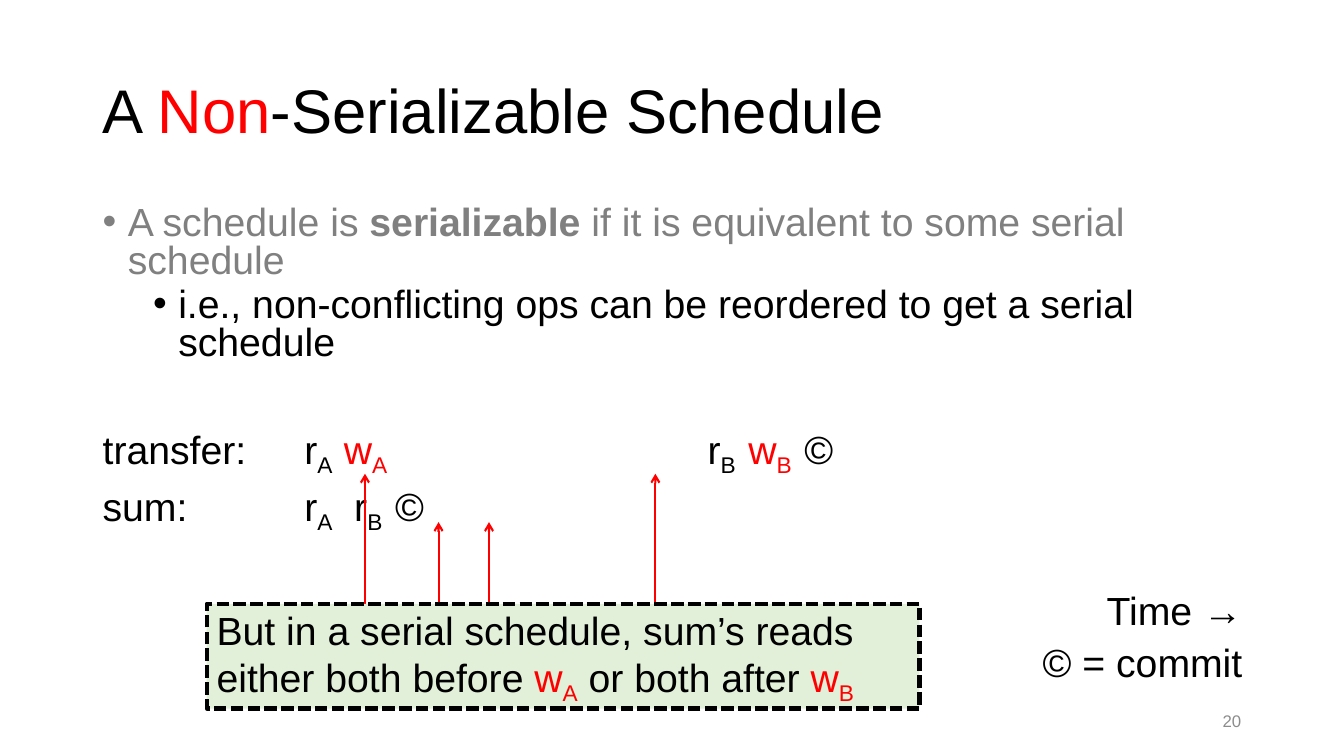
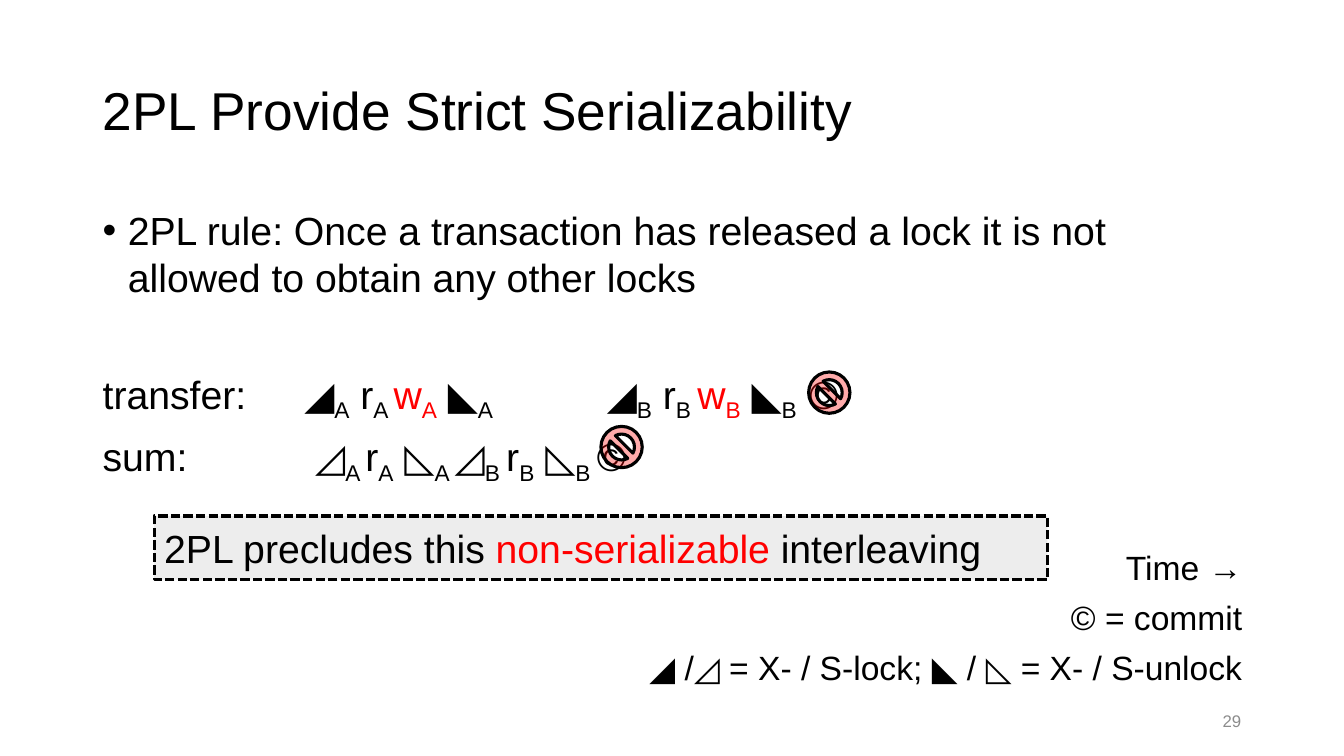
from lxml import etree
from pptx import Presentation
from pptx.dml.color import RGBColor
from pptx.enum import dml, shapes, text
from pptx.oxml import ns
from pptx.util import Inches, Pt

BLACK = RGBColor(0x00, 0x00, 0x00)
RED = RGBColor(0xFF, 0x00, 0x00)
GRAY = RGBColor(0x80, 0x80, 0x80)
PALE = RGBColor(0x8C, 0x8C, 0x8C)
GREEN = RGBColor(0xE2, 0xF0, 0xD9)
SILVER = RGBColor(0xED, 0xED, 0xED)
FONT = "Arial"
LEFT, WIDE = 0.92, 11.5
RIGHT = text.PP_ALIGN.RIGHT
MID = text.MSO_ANCHOR.MIDDLE


def add_sub(node, tag, **attrs):
    return etree.SubElement(node, ns.qn(tag), attrs)


def add_runs(para, line):
    """Add runs: *red*, ^bold^ and _subscript_ marks switch a style on and off."""
    for i, hue in enumerate(line.split("*")):
        for j, face in enumerate(hue.split("^")):
            for k, bit in enumerate(face.split("_")):
                if not bit:
                    continue
                run = para.add_run()
                run.text = bit
                if i % 2:
                    run.font.color.rgb = RED
                if j % 2:
                    run.font.bold = True
                if k % 2:
                    run.font._element.set("baseline", "-25000")


def set_para(para, line, size=28, color=BLACK, align=text.PP_ALIGN.LEFT,
             space=None, before=0):
    para.alignment = align
    para.space_before = Pt(before)
    if space:
        para.line_spacing = space
    para.font.name = FONT
    para.font.size = Pt(size)
    para.font.color.rgb = color
    add_runs(para, line)


def set_bullet(para, level):
    para.level = level
    props = para._p.get_or_add_pPr()
    props.set("marL", str(Inches(0.25 + 0.5 * level)))
    props.set("indent", str(Inches(-0.25)))
    add_sub(props, "a:buFont", typeface=FONT)
    add_sub(props, "a:buChar", char="•")


def add_slide(deck, title, size, page):
    slide = deck.slides.add_slide(deck.slide_layouts[5])
    head = slide.shapes.title
    head.left, head.top = Inches(LEFT), Inches(0.4)
    head.width, head.height = Inches(WIDE), Inches(1.45)
    head.text_frame.vertical_anchor = MID
    set_para(head.text_frame.paragraphs[0], title, size, space=0.9)
    frame = add_text(slide, 9.41, 6.95, 3, 0.4)
    frame.vertical_anchor = MID
    set_para(frame.paragraphs[0], page, 12, PALE, RIGHT)
    return slide


def add_text(slide, x, y, w, h):
    box = slide.shapes.add_textbox(Inches(x), Inches(y), Inches(w), Inches(h))
    box.text_frame.word_wrap = True
    return box.text_frame


def add_body(slide, rows):
    """Each row is a line of text, a bullet level or None, and its format."""
    frame = add_text(slide, LEFT, 2, WIDE, 4.76)
    for i, (line, level, form) in enumerate(rows):
        para = frame.add_paragraph() if i else frame.paragraphs[0]
        para._p.get_or_add_pPr().set("defTabSz", str(Inches(1)))
        if level is not None:
            set_bullet(para, level)
        set_para(para, line, **form)


def add_shape(slide, kind, x, y, w, h, fill, width):
    shape = slide.shapes.add_shape(kind, Inches(x), Inches(y), Inches(w), Inches(h))
    shape.shadow.inherit = False
    shape.fill.solid()
    shape.fill.fore_color.rgb = fill
    shape.line.color.rgb = BLACK
    shape.line.width = Pt(width)
    return shape


def add_note(slide, line, x, y, w, h, fill, width):
    box = add_shape(slide, shapes.MSO_SHAPE.RECTANGLE, x, y, w, h, fill, width)
    box.line.dash_style = dml.MSO_LINE.SQUARE_DOT
    box.text_frame.word_wrap = True
    box.text_frame.vertical_anchor = MID
    set_para(box.text_frame.paragraphs[0], line)


def add_arrow(slide, x, top, base):
    line = slide.shapes.add_connector(
        shapes.MSO_CONNECTOR.STRAIGHT, Inches(x), Inches(base), Inches(x), Inches(top))
    line.line.color.rgb = RED
    line.line.width = Pt(1.5)
    add_sub(line.line._get_or_add_ln(), "a:tailEnd", type="arrow")
    add_sub(line._element.spPr, "a:effectLst")


def add_ban(slide, x, y):
    ban = add_shape(slide, shapes.MSO_SHAPE.NO_SYMBOL, x, y, 0.41, 0.41, RED, 2.25)
    tint = ban._element.spPr.find(ns.qn("a:solidFill"))[0]
    add_sub(tint, "a:alpha", val="33000")


def add_plan(deck):
    slide = add_slide(deck, "A *Non*-Serializable Schedule", 44, "20")
    row = dict(space=0.8, before=10)
    gap = dict(row, before=47)
    add_body(slide, [
        ("A schedule is ^serializable^ if it is equivalent to some serial schedule",
         0, dict(row, color=GRAY)),
        ("i.e., non-conflicting ops can be reordered to get a serial schedule",
         1, dict(row, before=5)),
        ("transfer: \tr_A  _*w_A_*  \t\t\tr_B  _*w_B  _*©", None, gap),
        ("sum: \t\tr_A_  r_B  _©", None, row),
        ("Time →", None, dict(gap, align=RIGHT)),
        ("© = commit", None, dict(row, align=RIGHT)),
    ])
    for x, top in ((3.62, 4.7), (4.35, 5.18), (4.85, 5.18), (6.5, 4.7)):
        add_arrow(slide, x, top, 6.03)
    add_note(slide, "But in a serial schedule, sum’s reads either both before "
             "*w_A_* or both after *w_B_*", 2.05, 5.99, 7.07, 1.04, GREEN, 3)


def add_locks(deck):
    slide = add_slide(deck, "2PL Provide Strict Serializability", 38, "29")
    row = dict(space=0.9, before=10)
    gap = dict(row, before=50)
    key = dict(row, size=24, align=RIGHT)
    add_body(slide, [
        ("2PL rule: Once a transaction has released a lock it is not allowed "
         "to obtain any other locks", 0, dict(before=10)),
        ("transfer: \t◢_A_ r_A _*w_A_* ◣_A_ \t\t◢_B_ r_B _*w_B_* ◣_B  _©", None, gap),
        ("sum: \t\t ◿_A _r_A_ ◺_A _◿_B _r_B_ ◺_B _©", None, row),
        ("Time →", None, dict(key, before=50)),
        ("© = commit", None, key),
        ("◢ /◿ = X- / S-lock; ◣ / ◺ = X- / S-unlock", None, key),
    ])
    add_note(slide, "2PL precludes this *non-serializable* interleaving",
             1.53, 5.12, 8.86, 0.63, SILVER, 2.25)
    for x, y in ((8.02, 3.69), (5.96, 4.23)):
        add_ban(slide, x, y)


def main():
    deck = Presentation()
    deck.slide_width, deck.slide_height = Inches(13.33), Inches(7.5)
    add_plan(deck)
    add_locks(deck)
    deck.save("out.pptx")


if __name__ == "__main__":
    main()
